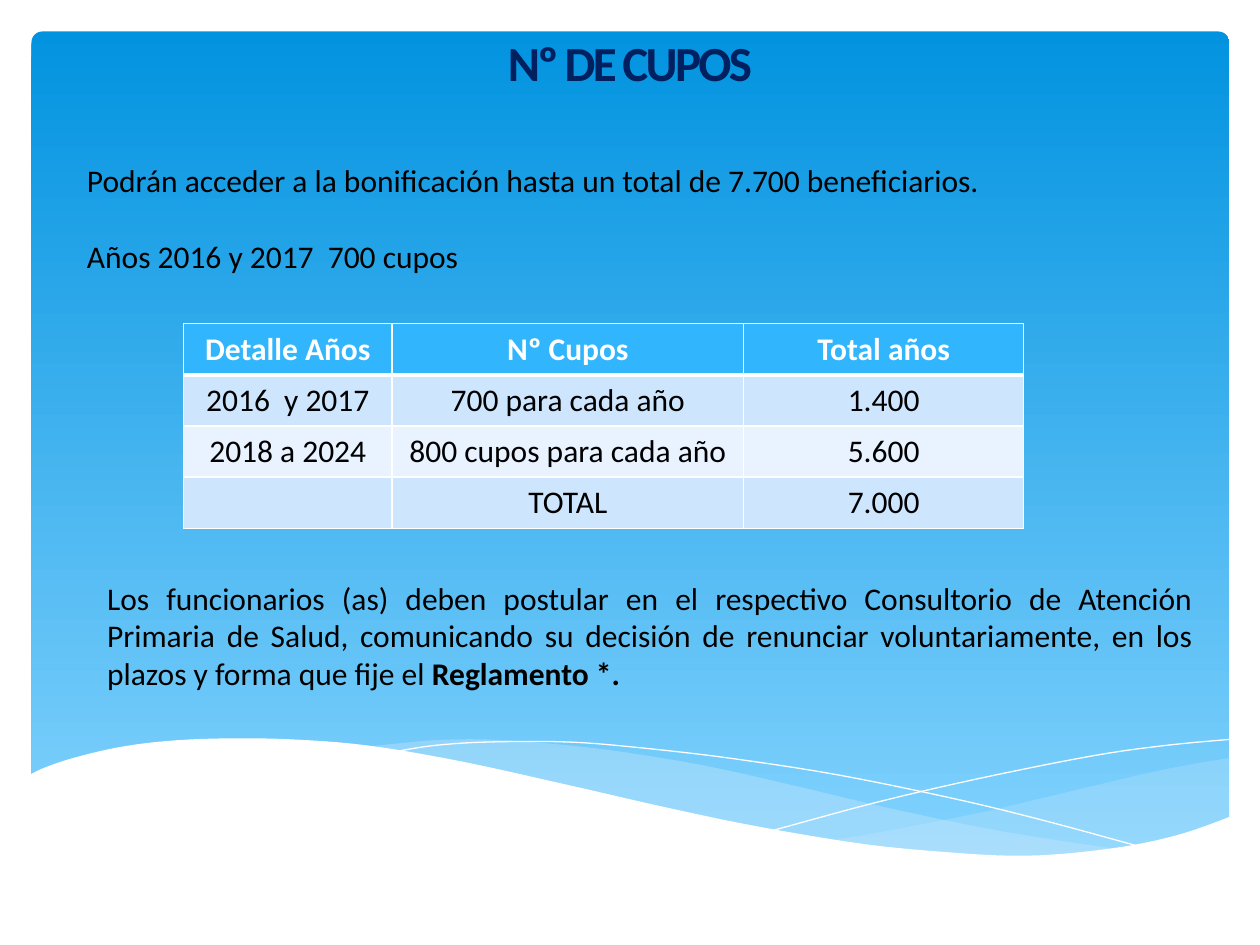
from dataclasses import dataclass
from typing import NamedTuple

from lxml import etree
from pptx import Presentation, util as u
from pptx.dml.color import RGBColor
from pptx.enum import shapes, text
from pptx.oxml.ns import qn


@dataclass(frozen=True)
class Theme:
    font: str = "Calibri"
    title_size: float = 28
    text_size: float = 18
    navy: str = "002060"
    black: str = "000000"
    white: str = "FFFFFF"
    sky_top: str = "0293E0"
    sky_bottom: str = "83D3FE"
    mist: str = "C6E7FC"
    header: str = "31B6FD"
    bands: tuple = ("CEE5FE", "E8F3FF")


class Box(NamedTuple):
    left: float
    top: float
    width: float
    height: float


class Span(NamedTuple):
    words: str
    bold: bool = False


class Wave(NamedTuple):
    """Smooth edges through knots, then straight corners; filled or stroked."""
    edges: list
    corners: list = []
    fill: str = ""
    alpha: int = 100


THEME = Theme()
ALIGN = text.PP_ALIGN
SKY = Box(18, 18, 684.5, 475)
TITLE = Box(0, 15, 720, 41)
INTRO = Box(42.5, 88.5, 635, 73)
CLOSING = Box(54, 327, 635, 94)
TABLE = Box(105, 185, 480, 117)
COLUMNS = (119, 201, 160)
ROW_HEIGHT = 29.25

WAVES = [
    Wave([[(703, 433), (664, 440), (621, 450), (562, 464), (509, 474.5), (477, 480)],
          [(477, 480), (518, 485), (554, 489), (587, 489.5), (622, 487.5), (653, 483),
           (680, 476), (703, 467)]], fill=THEME.mist, alpha=29),
    Wave([[(644, 486), (603, 480), (559, 472.5), (509, 462), (454, 449), (410, 439),
           (371, 432), (335, 427), (302, 424), (274, 422.5), (248, 423), (226, 425),
           (207, 427)],
          [(207, 427), (247, 432.5), (292, 441.5), (324, 449), (382, 462), (433, 473),
           (480, 481), (521, 486.5), (557, 489), (590, 489.5), (618, 489), (644, 486)]],
         fill=THEME.mist, alpha=40),
    Wave([[(223, 430), (248, 426), (279, 424), (325, 424), (368, 427.5), (419, 433.5),
           (480, 443), (548, 457), (599, 469.5), (654, 484.5)]]),
    Wave([[(442, 474.5), (501, 458.5), (559, 445), (624, 432), (666, 426), (703, 422.5)]]),
    Wave([[(703.5, 466.5), (677, 476), (647, 483), (612, 487.5), (582.5, 489), (548, 487.5),
           (495, 482.5), (434, 472.5), (381, 461.5), (322, 448), (263, 435), (210, 426),
           (166, 422.5), (127, 422), (95, 423.5), (68, 427), (42.5, 433), (26, 438.5),
           (16.5, 443)]],
         corners=[(16.5, 526.5), (703.5, 526.5)], fill=THEME.white),
]

ROWS = [
    ("Detalle Años", "Nº Cupos", "Total años"),
    ("2016  y 2017", "700 para cada año", "1.400"),
    ("2018 a 2024", "800 cupos para cada año", "5.600"),
    ("", "TOTAL", "7.000"),
]


def rgb(code: str) -> RGBColor:
    return RGBColor.from_string(code)


def smooth(knots: list, steps: int = 5) -> list:
    """Sample a Catmull-Rom curve through the knots."""
    padded = [knots[0], *knots, knots[-1]]
    points = [knots[0]]
    for a, b, c, d in zip(padded, padded[1:], padded[2:], padded[3:]):
        for t in (step / steps for step in range(1, steps + 1)):
            points.append(tuple(
                0.5 * (2 * q + (r - p) * t + (2 * p - 5 * q + 4 * r - s) * t ** 2
                       + (3 * q - p - 3 * r + s) * t ** 3)
                for p, q, r, s in zip(a, b, c, d)))
    return points


def draw_sky(page) -> None:
    sky = page.shapes.add_shape(shapes.MSO_SHAPE.ROUNDED_RECTANGLE, *map(u.Pt, SKY))
    sky.adjustments[0] = 0.013
    sky.shadow.inherit = False
    sky.line.fill.background()
    sky.fill.gradient()
    sky.fill.gradient_angle = 270
    for stop, colour in zip(sky.fill.gradient_stops, (THEME.sky_top, THEME.sky_bottom)):
        stop.color.rgb = rgb(colour)


def draw_wave(page, wave: Wave) -> None:
    points = [point for edge in wave.edges for point in smooth(edge)] + wave.corners
    start, *rest = [(u.Pt(x), u.Pt(y)) for x, y in points]
    builder = page.shapes.build_freeform(*start)
    builder.add_line_segments(rest, close=bool(wave.fill))
    shape = builder.convert_to_shape()
    shape.shadow.inherit = False
    if not wave.fill:
        shape.fill.background()
        shape.line.color.rgb = rgb(THEME.white)
        shape.line.width = u.Pt(0)
        return
    shape.line.fill.background()
    shape.fill.solid()
    shape.fill.fore_color.rgb = rgb(wave.fill)
    if wave.alpha < 100:
        colour = shape._element.spPr.find(qn("a:solidFill"))[0]
        etree.SubElement(colour, qn("a:alpha")).set("val", str(wave.alpha * 1000))


def write(para, spans: list, align, size: float = THEME.text_size,
          colour: str = THEME.black) -> None:
    para.alignment = align
    for words, bold in spans:
        span = para.add_run()
        span.text = words
        formats = {"name": THEME.font, "size": u.Pt(size), "bold": bold}
        for name, value in formats.items():
            setattr(span.font, name, value)
        span.font.color.rgb = rgb(colour)


def place(page, holder, box: Box):
    """Move a placeholder in front of the backdrop and return its text frame."""
    page.shapes._spTree.append(holder._element)
    for name, value in zip(Box._fields, box):
        setattr(holder, name, u.Pt(value))
    frame = holder.text_frame
    formats = {"word_wrap": True, "auto_size": text.MSO_AUTO_SIZE.NONE,
               "vertical_anchor": text.MSO_ANCHOR.TOP}
    for name, value in formats.items():
        setattr(frame, name, value)
    return frame


def fill_body(page, holder, box: Box, paragraphs: list) -> None:
    frame = place(page, holder, box)
    for index, spans in enumerate(paragraphs):
        para = frame.add_paragraph() if index else frame.paragraphs[0]
        write(para, spans, ALIGN.JUSTIFY)
        para.space_before = u.Pt(22 if index else 0)
        properties = para._p.get_or_add_pPr()
        for name in ("marL", "indent"):
            properties.set(name, "0")
        etree.SubElement(properties, qn("a:buNone"))


def border(cell, bottom: float) -> None:
    properties = cell._tc.get_or_add_tcPr()
    widths = {"lnL": 1, "lnR": 1, "lnT": 1, "lnB": bottom}
    for index, (side, width) in enumerate(widths.items()):
        line = etree.Element(qn(f"a:{side}"), w=str(u.Pt(width)))
        fill = etree.SubElement(line, qn("a:solidFill"))
        etree.SubElement(fill, qn("a:srgbClr")).set("val", THEME.white)
        properties.insert(index, line)


def draw_table(page) -> None:
    table = page.shapes.add_table(len(ROWS), len(COLUMNS), *map(u.Pt, TABLE)).table
    table.horz_banding = False
    for column, width in zip(table.columns, COLUMNS):
        column.width = u.Pt(width)
    for index, (row, values) in enumerate(zip(table.rows, ROWS)):
        row.height = u.Pt(ROW_HEIGHT)
        head = index == 0
        for cell, value in zip(row.cells, values):
            cell.fill.solid()
            cell.fill.fore_color.rgb = rgb(THEME.header if head else THEME.bands[(index - 1) % 2])
            border(cell, 3 if head else 1)
            write(cell.text_frame.paragraphs[0], [Span(value, head)] if value else [],
                  ALIGN.CENTER, colour=THEME.white if head else THEME.black)


def main() -> None:
    deck = Presentation()
    deck.slide_width, deck.slide_height = u.Pt(720), u.Pt(540)
    page = deck.slides.add_slide(deck.slide_layouts.get_by_name("Two Content"))
    title, intro, closing = page.placeholders
    draw_sky(page)
    for wave in WAVES:
        draw_wave(page, wave)
    heading = place(page, title, TITLE).paragraphs[0]
    write(heading, [Span("Nº DE CUPOS", True)], ALIGN.CENTER, THEME.title_size, THEME.navy)
    heading.runs[0].font._element.set("spc", "-150")
    fill_body(page, intro, INTRO, [
        [Span("Podrán acceder a la bonificación hasta un total de 7.700 beneficiarios.")],
        [Span("Años 2016 y 2017  700 cupos")]])
    draw_table(page)
    fill_body(page, closing, CLOSING, [[
        Span("Los funcionarios (as) deben postular en el respectivo Consultorio de Atención "
             "Primaria de Salud, comunicando su decisión de renunciar voluntariamente, en los "
             "plazos y forma que fije el "),
        Span("Reglamento *.", True)]])
    deck.save("out.pptx")


if __name__ == "__main__":
    main()
